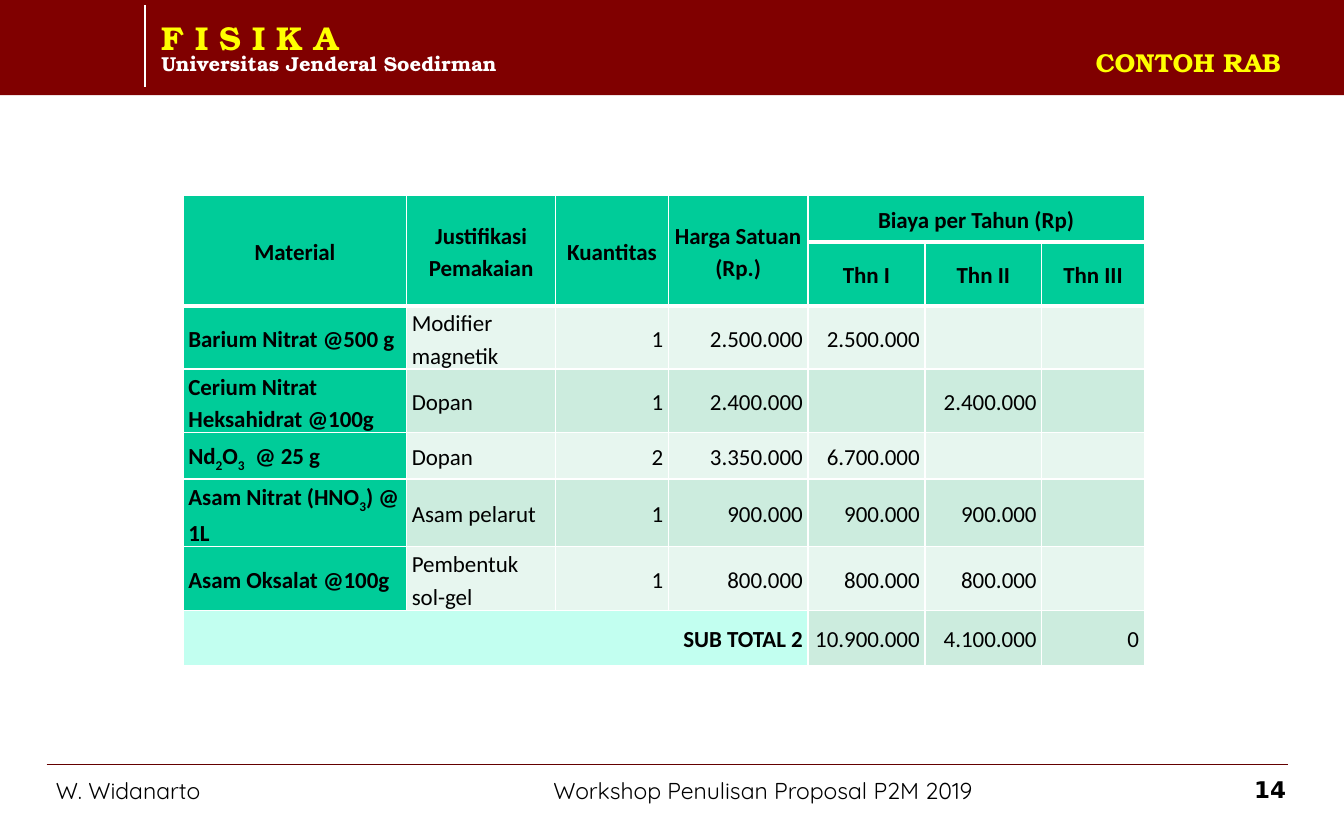
"""Build the budget example slide of the proposal workshop."""
from pptx import Presentation, util as u
from pptx.dml.color import RGBColor
from pptx.enum import shapes, text
from pptx.oxml import ns
from lxml import etree

MAROON = RGBColor(0x80, 0x00, 0x00)
DARK_RED = RGBColor(0x64, 0x00, 0x00)
WHITE = RGBColor(0xFF, 0xFF, 0xFF)
BLACK = RGBColor(0x00, 0x00, 0x00)
YELLOW = RGBColor(0xFF, 0xFF, 0x00)
GREEN = RGBColor(0x00, 0xCC, 0x99)
PALE = RGBColor(0xE7, 0xF6, 0xEF)
MINT = RGBColor(0xCC, 0xEC, 0xDE)
AQUA = RGBColor(0xC2, 0xFF, 0xF0)

LEFT, CENTER, RIGHT = text.PP_ALIGN.LEFT, text.PP_ALIGN.CENTER, text.PP_ALIGN.RIGHT

COLUMN_WIDTHS = [2.16, 1.44, 1.09, 1.35, 1.13, 1.13, 0.99]
ROW_HEIGHTS = [0.45, 0.45, 0.55, 0.56, 0.45, 0.56, 0.55, 0.53]
HEADER_ROWS = 2
BUDGET = [
    ["Material", "Justifikasi Pemakaian", "Kuantitas", "Harga Satuan (Rp.)",
     "Biaya per Tahun (Rp)", "", ""],
    ["", "", "", "", "Thn I", "Thn II", "Thn III"],
    ["Barium Nitrat @500 g", "Modifier magnetik", "1", "2.500.000", "2.500.000", "", ""],
    ["Cerium Nitrat Heksahidrat @100g", "Dopan", "1", "2.400.000", "", "2.400.000", ""],
    ["Nd_2O_3  @ 25 g", "Dopan", "2", "3.350.000", "6.700.000", "", ""],
    ["Asam Nitrat (HNO_3) @ 1L", "Asam pelarut", "1", "900.000", "900.000", "900.000", ""],
    ["Asam Oksalat @100g", "Pembentuk sol-gel", "1", "800.000", "800.000", "800.000", ""],
    ["SUB TOTAL 2", "", "", "", "10.900.000", "4.100.000", "0"],
]
TOTAL_ROW = len(BUDGET) - 1
MERGES = [((0, col), (1, col)) for col in range(4)]
MERGES += [((0, 4), (0, 6)), ((TOTAL_ROW, 0), (TOTAL_ROW, 3))]


def assign(target, values):
    """Set each named attribute on the target."""
    for name, value in values.items():
        setattr(target, name, value)


class BudgetSlide:
    """Hold the slide and its style, and draw each kind of element."""

    def __init__(self, width, height):
        """Start a presentation with one blank slide."""
        self.deck = Presentation()
        assign(self.deck, {"slide_width": u.Inches(width), "slide_height": u.Inches(height)})
        self.slide = self.deck.slides.add_slide(self.deck.slide_layouts[6])
        self.cell_font = {"name": "Calibri", "size": u.Pt(16)}

    def band(self, box, color):
        """Draw a plain filled rectangle."""
        band = self.slide.shapes.add_shape(shapes.MSO_SHAPE.RECTANGLE, *map(u.Inches, box))
        band.shadow.inherit = False
        band.fill.solid()
        band.fill.fore_color.rgb = color
        band.line.fill.background()

    def rule(self, ends, color, width):
        """Draw a straight line without a shadow."""
        rule = self.slide.shapes.add_connector(
            shapes.MSO_CONNECTOR.STRAIGHT, *map(u.Inches, ends))
        rule.line.color.rgb = color
        rule.line.width = u.Pt(width)
        etree.SubElement(rule._element.spPr, ns.qn("a:effectLst"))

    def add_runs(self, paragraph, content, color, font):
        """Add runs to a paragraph, lowering each character after an underscore."""
        first, *rest = content.split("_")
        pieces = [(first, False)]
        for part in rest:
            pieces += [(part[:1], True), (part[1:], False)]
        for piece, lowered in pieces:
            if piece:
                run = paragraph.add_run()
                run.text = piece
                assign(run.font, font)
                run.font.color.rgb = color
                if lowered:
                    run._r.get_or_add_rPr().set("baseline", "-25000")

    def label(self, box, lines, inset=(0.11, 0.06), wrap=True, anchor=text.MSO_ANCHOR.TOP,
              **layout):
        """Add a text box with one paragraph per line."""
        frame = self.slide.shapes.add_textbox(*map(u.Inches, box)).text_frame
        side, edge = map(u.Inches, inset)
        assign(frame, {"word_wrap": wrap, "vertical_anchor": anchor,
                       "margin_left": side, "margin_right": side,
                       "margin_top": edge, "margin_bottom": edge})
        for index, (content, color, name, size, bold) in enumerate(lines):
            paragraph = frame.add_paragraph() if index else frame.paragraphs[0]
            assign(paragraph, layout)
            self.add_runs(paragraph, content, color,
                          {"name": name, "size": u.Pt(size), "bold": bold})

    def borders(self, cell, row):
        """Give a cell white borders, thick under the header rows."""
        widths = {"lnL": 1, "lnR": 1,
                  "lnT": 3 if 0 < row <= HEADER_ROWS else 1,
                  "lnB": 3 if row < HEADER_ROWS else 1}
        properties = cell._tc.get_or_add_tcPr()
        for side, width in widths.items():
            border = etree.SubElement(properties, ns.qn(f"a:{side}"), w=str(u.Pt(width)))
            fill = etree.SubElement(border, ns.qn("a:solidFill"))
            etree.SubElement(fill, ns.qn("a:srgbClr"), val=str(WHITE))

    def cell_style(self, row, col):
        """Return the fill, alignment and weight for a table position."""
        if row < HEADER_ROWS:
            return GREEN, CENTER, True
        if row == TOTAL_ROW and col < 4:
            return AQUA, RIGHT, True
        if col == 0:
            return GREEN, LEFT, True
        return MINT if row % 2 else PALE, LEFT if col == 1 else RIGHT, False

    def table(self, left, top):
        """Draw the budget table."""
        size = map(u.Inches, (left, top, sum(COLUMN_WIDTHS), sum(ROW_HEIGHTS)))
        budget = self.slide.shapes.add_table(
            len(ROW_HEIGHTS), len(COLUMN_WIDTHS), *size).table
        for column, width in zip(budget.columns, COLUMN_WIDTHS):
            column.width = u.Inches(width)
        for line, height in zip(budget.rows, ROW_HEIGHTS):
            line.height = u.Inches(height)
        for start, end in MERGES:
            budget.cell(*start).merge(budget.cell(*end))
        for row, contents in enumerate(BUDGET):
            for col, content in enumerate(contents):
                cell = budget.cell(row, col)
                fill, align, bold = self.cell_style(row, col)
                assign(cell, {"vertical_anchor": text.MSO_ANCHOR.MIDDLE,
                              "margin_left": u.Inches(0.05), "margin_right": u.Inches(0.05),
                              "margin_top": 0, "margin_bottom": 0})
                self.borders(cell, row)
                cell.fill.solid()
                cell.fill.fore_color.rgb = fill
                paragraph = cell.text_frame.paragraphs[0]
                assign(paragraph, {"alignment": align, "line_spacing": 1.15})
                self.add_runs(paragraph, content, BLACK, {**self.cell_font, "bold": bold})


def main():
    """Compose the slide and save it."""
    page = BudgetSlide(12.99, 8.03)
    serif, sans = "TeX Gyre Bonum", "Quicksand"
    page.band((-0.01, 0, 13.01, 0.92), MAROON)
    page.rule((0.45, 7.39, 12.45, 7.39), DARK_RED, 1)
    page.rule((1.4, 0.05, 1.4, 0.84), WHITE, 1.5)
    page.label((1.56, 0.24, 3.26, 0.5),
               [("F I S I K A", YELLOW, serif, 23, True),
                ("Universitas Jenderal Soedirman", WHITE, serif, 14, True)],
               inset=(0, 0), wrap=False, line_spacing=0.8)
    page.label((4.92, 0.33, 7.57, 0.54), [("CONTOH RAB", YELLOW, serif, 18, True)],
               anchor=text.MSO_ANCHOR.MIDDLE, alignment=RIGHT)
    page.table(1.77, 1.89)
    for left, width, content in [(0.43, 1.72, "W. Widanarto"),
                                 (5.24, 4.46, "Workshop Penulisan Proposal P2M 2019")]:
        page.label((left, 7.5, width, 0.33), [(content, BLACK, sans, 16, False)],
                   wrap=False, line_spacing=0.8)
    page.label((11.79, 7.43, 0.64, 0.45), [("14", BLACK, "DejaVu Sans", 16, True)],
               inset=(0, 0.06), alignment=RIGHT)
    page.deck.save("out.pptx")


if __name__ == "__main__":
    main()
